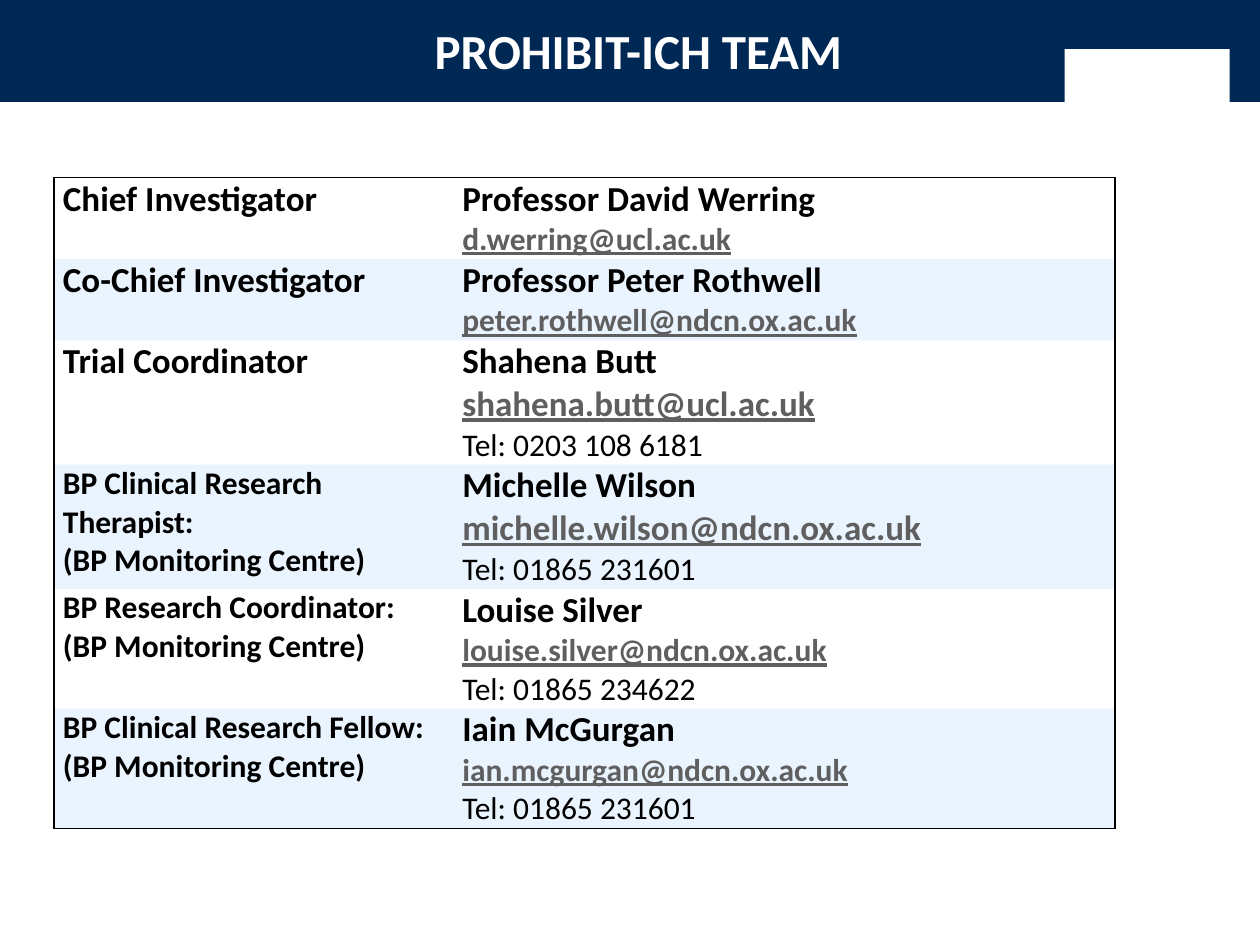
from dataclasses import dataclass

from lxml import etree
from pptx import Presentation
from pptx import util as u
from pptx.dml.color import RGBColor
from pptx.enum import shapes, text
from pptx.oxml import ns


@dataclass(frozen=True)
class Theme:
    font: str = "Calibri"
    navy: str = "002855"
    white: str = "FFFFFF"
    ink: str = "000000"
    link: str = "5F5F5F"
    band: str = "99CCFF"
    band_alpha: int = 20
    title: int = 28
    large: int = 20
    body: int = 18


THEME = Theme()

# Content: role lines, role size, name, email, email size, telephone, row height
TITLE = "PROHIBIT-ICH TEAM"
CENTRE = "(BP Monitoring Centre)"
TEAM = [
    (["Chief Investigator"], THEME.large, "Professor David Werring",
     "d.werring@ucl.ac.uk", THEME.body, None, 0.6),
    (["Co-Chief Investigator"], THEME.large, "Professor Peter Rothwell",
     "peter.rothwell@ndcn.ox.ac.uk", THEME.body, None, 0.6),
    (["Trial Coordinator"], THEME.large, "Shahena Butt",
     "shahena.butt@ucl.ac.uk", THEME.large, "Tel: 0203 108 6181", 0.95),
    (["BP Clinical Research Therapist:", CENTRE], THEME.body, "Michelle Wilson",
     "michelle.wilson@ndcn.ox.ac.uk", THEME.large, "Tel: 01865 231601", 0.92),
    (["BP Research Coordinator:", CENTRE], THEME.body, "Louise Silver",
     "louise.silver@ndcn.ox.ac.uk", THEME.body, "Tel: 01865 234622", 0.88),
    (["BP Clinical Research Fellow:", CENTRE], THEME.body, "Iain McGurgan",
     "ian.mcgurgan@ndcn.ox.ac.uk", THEME.body, "Tel: 01865 231601", 0.88),
]

# Layout in inches
SLIDE = (10, 7.5)
BANNER = (0, 0, 10, 0.81)
LOGO_BLOCK = (8.45, 0.39, 1.31, 0.42)
TITLE_BOX = (3.35, 0.11, 3.5, 0.57)
TABLE_ORIGIN = (0.43, 1.41)
COLUMNS = (3.17, 5.25)
CELL_MARGIN = 0.07
NO_STYLE = "{2D5ABB26-0587-4C30-8999-92F81FD0307C}"


def inches(values):
    return [u.Inches(value) for value in values]


def style(paragraph, size, color=THEME.ink, bold=True, underline=False):
    font = paragraph.font
    font.name, font.size = THEME.font, u.Pt(size)
    font.bold, font.underline = bold, underline
    font.color.rgb = RGBColor.from_string(color)


def add_block(slide, box, color):
    block = slide.shapes.add_shape(shapes.MSO_SHAPE.RECTANGLE, *inches(box))
    block.shadow.inherit = False
    block.fill.solid()
    block.fill.fore_color.rgb = RGBColor.from_string(color)
    block.line.fill.background()
    return block


def fill_cell(cell, lines):
    """Write (text, style options) lines into a cell."""
    cell.margin_left = cell.margin_right = u.Inches(CELL_MARGIN)
    cell.margin_top = cell.margin_bottom = 0
    frame = cell.text_frame
    for index, (line, options) in enumerate(lines):
        paragraph = frame.add_paragraph() if index else frame.paragraphs[0]
        paragraph.text = line
        style(paragraph, **options)


def paint_band(cell):
    cell.fill.solid()
    cell.fill.fore_color.rgb = RGBColor.from_string(THEME.band)
    color = cell._tc.tcPr.find(".//" + ns.qn("a:srgbClr"))
    etree.SubElement(color, ns.qn("a:alpha"), val=str(THEME.band_alpha * 1000))


def draw_borders(cell, sides):
    """Add 1 pt borders; sides come in the order L, R, T, B."""
    properties = cell._tc.get_or_add_tcPr()
    for index, side in enumerate(sides):
        line = etree.Element(ns.qn("a:ln" + side), w=str(u.Pt(1)))
        fill = etree.SubElement(line, ns.qn("a:solidFill"))
        etree.SubElement(fill, ns.qn("a:srgbClr"), val=THEME.ink)
        properties.insert(index, line)


def add_team_table(slide):
    heights = [member[-1] for member in TEAM]
    table = slide.shapes.add_table(
        len(TEAM), len(COLUMNS),
        *inches((*TABLE_ORIGIN, sum(COLUMNS), sum(heights)))).table
    table.first_row = table.horz_banding = False
    table._tbl.tblPr.find(ns.qn("a:tableStyleId")).text = NO_STYLE
    for column, width in zip(table.columns, COLUMNS):
        column.width = u.Inches(width)

    for row, (roles, role_size, name, email, email_size, phone, height) in enumerate(TEAM):
        table.rows[row].height = u.Inches(height)
        contact = [(name, dict(size=THEME.large)),
                   (email, dict(size=email_size, color=THEME.link, underline=True))]
        if phone:
            contact.append((phone, dict(size=THEME.body, bold=False)))
        role_lines = [(role, dict(size=role_size)) for role in roles]
        edges = "T" * (row == 0) + "B" * (row == len(TEAM) - 1)
        for column, (lines, side) in enumerate([(role_lines, "L"), (contact, "R")]):
            cell = table.cell(row, column)
            fill_cell(cell, lines)
            if row % 2:
                paint_band(cell)
            else:
                cell.fill.background()
            draw_borders(cell, side + edges)


def main():
    presentation = Presentation()
    presentation.slide_width, presentation.slide_height = inches(SLIDE)
    slide = presentation.slides.add_slide(presentation.slide_layouts[5])

    # Banner, behind the title, with a plain block at the right
    banner = add_block(slide, BANNER, THEME.navy)
    slide.shapes._spTree.insert(2, banner._element)
    add_block(slide, LOGO_BLOCK, THEME.white)

    # Title
    title = slide.shapes.title
    title.left, title.top, title.width, title.height = inches(TITLE_BOX)
    frame = title.text_frame
    frame.text = TITLE
    frame.word_wrap = False
    frame.auto_size = text.MSO_AUTO_SIZE.NONE
    frame.vertical_anchor = text.MSO_ANCHOR.TOP
    frame.paragraphs[0].alignment = text.PP_ALIGN.LEFT
    style(frame.paragraphs[0], THEME.title, THEME.white)

    add_team_table(slide)
    presentation.save("out.pptx")


if __name__ == "__main__":
    main()
